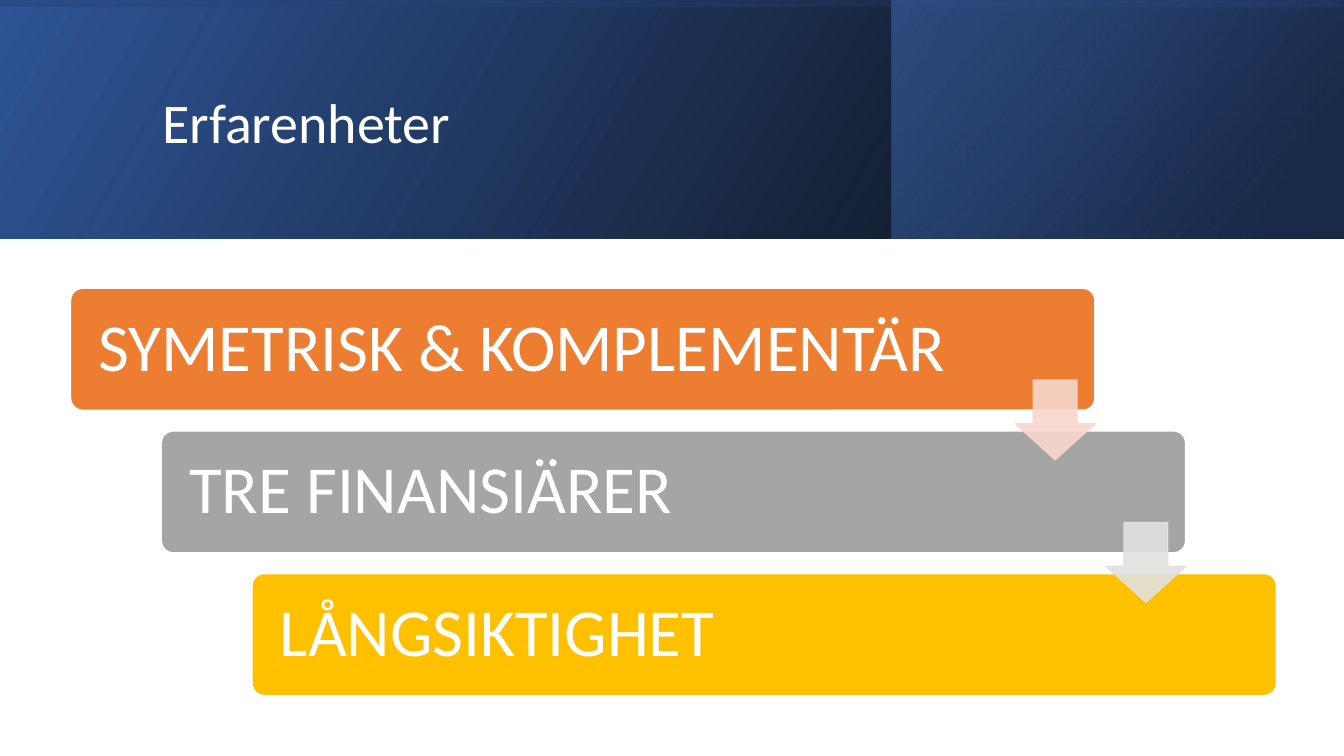
from lxml import etree
from pptx import Presentation
from pptx import util as u
from pptx.dml.color import RGBColor
from pptx.enum import shapes, text
from pptx.oxml.ns import qn

KIND = shapes.MSO_SHAPE
WHITE = "FFFFFF"
# box, rotation, gradient angle, stops of (position, colour, opacity)
BANDS = [
    ((0, 0, 13.33, 2.37), 0, 330, [(0, "000000", 96), (100, "2F5597", 100)]),
    ((8.84, 0, 4.49, 2.37), 0, 320, [(19, "203864", 68), (100, "4472C4", 48)]),
    ((5.48, -5.48, 2.37, 13.33), 270, 350, [(23, "2F5597", 16), (99, "000000", 45)]),
]
STEPS = [
    ("SYMETRISK & KOMPLEMENTÄR", "ED7D31", "F8D7CE"),
    ("TRE FINANSIÄRER", "A5A5A5", "E1E1E1"),
    ("LÅNGSIKTIGHET", "FFC000", None),
]


def rgb(code):
    return RGBColor.from_string(code)


def put(obj, vals):
    """Set each attribute named in vals on obj."""
    for key, val in vals.items():
        setattr(obj, key, val)


def add(slide, kind, box):
    shape = slide.shapes.add_shape(kind, *map(u.Inches, box))
    shape.shadow.inherit = False
    return shape


def paint(shape, code):
    shape.fill.solid()
    shape.fill.fore_color.rgb = rgb(code)
    shape.line.color.rgb = rgb(code)
    shape.line.width = u.Pt(1)


def fade(clr, pct):
    """Give a colour element an opacity in percent."""
    etree.SubElement(clr, qn("a:alpha"), val=str(pct * 1000))


def write(shape, words, size):
    para = shape.text_frame.paragraphs[0]
    put(para, {"text": words, "alignment": text.PP_ALIGN.LEFT, "line_spacing": 0.9})
    put(para.runs[0].font, {"name": "Calibri", "size": u.Pt(size)})
    para.runs[0].font.color.rgb = rgb(WHITE)


def band(slide, box, turn, angle, stops):
    """Add a mirrored rectangle with a translucent gradient."""
    shape = add(slide, KIND.RECTANGLE, box)
    shape.rotation = turn
    shape.line.fill.background()
    props = shape._element.spPr
    props.find(qn("a:xfrm")).set("flipH", "1")
    grad = etree.Element(qn("a:gradFill"), rotWithShape="1")
    items = etree.SubElement(grad, qn("a:gsLst"))
    for pos, code, pct in stops:
        stop = etree.SubElement(items, qn("a:gs"), pos=str(pos * 1000))
        fade(etree.SubElement(stop, qn("a:srgbClr"), val=code), pct)
    etree.SubElement(grad, qn("a:lin"), ang=str(angle * 60000), scaled="0")
    props.find(qn("a:prstGeom")).addnext(grad)


def header(slide, box):
    for item in BANDS:
        band(slide, *item)
    title = slide.shapes.title
    put(title, dict(zip(("left", "top", "width", "height"), map(u.Inches, box))))
    put(title.text_frame, {"vertical_anchor": text.MSO_ANCHOR.MIDDLE,
                           "auto_size": text.MSO_AUTO_SIZE.NONE})
    write(title, "Erfarenheter", 40)
    # the title belongs in front of the bands
    slide.shapes._spTree.append(title._element)


def bar(slide, box, words, code):
    shape = add(slide, KIND.ROUNDED_RECTANGLE, box)
    shape.adjustments[0] = 0.1
    paint(shape, code)
    shape.line.color.rgb = rgb(WHITE)
    put(shape.text_frame, {"margin_left": u.Inches(0.24), "word_wrap": True,
                           "vertical_anchor": text.MSO_ANCHOR.MIDDLE})
    write(shape, words, 48)


def arrow(slide, box, code):
    shape = add(slide, KIND.DOWN_ARROW, box)
    shape.adjustments[0], shape.adjustments[1] = 0.55, 0.45
    paint(shape, code)
    for clr in shape._element.spPr.iter(qn("a:srgbClr")):
        fade(clr, 90)


def stairs(slide, box):
    """Place the bars stepwise from top left to bottom right of box."""
    left, top, wide, high = box
    w, h, side = 10.16, 1.21, 0.79
    dx = (wide - w) / (len(STEPS) - 1)
    dy = (high - h) / (len(STEPS) - 1)
    spots = [(left + i * dx, top + i * dy) for i in range(len(STEPS))]
    for (x, y), (words, code, _) in zip(spots, STEPS):
        bar(slide, (x, y, w, h), words, code)
    for (x, y), (_, _, tint) in zip(spots, STEPS):
        if tint:
            arrow(slide, (x + 9.37, y + 0.91, side, side), tint)


def main():
    deck = Presentation()
    put(deck, {"slide_width": u.Inches(13.33), "slide_height": u.Inches(7.5)})
    slide = deck.slides.add_slide(deck.slide_layouts[5])
    header(slide, (1.51, 0.38, 10.63, 1.72))
    stairs(slide, (0.7, 2.86, 11.96, 4.04))
    deck.save("out.pptx")


if __name__ == "__main__":
    main()
